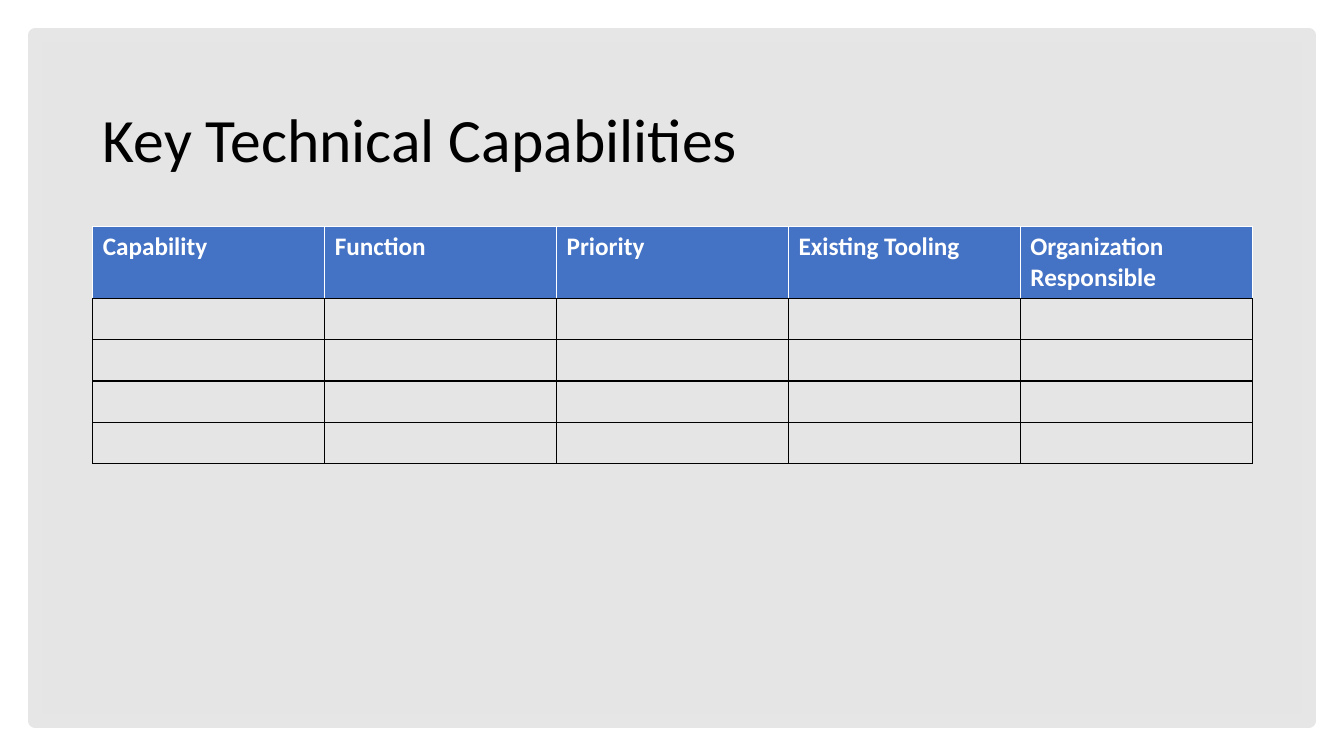
from lxml.etree import SubElement
from pptx import Presentation
from pptx.dml.color import RGBColor
from pptx.enum.shapes import MSO_SHAPE as Preset
from pptx.enum.text import MSO_ANCHOR as Anchor, MSO_AUTO_SIZE as AutoSize, PP_ALIGN as Align
from pptx.oxml.ns import qn
from pptx.util import Inches, Pt

BLACK, WHITE, BLUE, PALE = "000000", "FFFFFF", "4472C4", "E7E6E6"
HEADINGS = ["Capability", "Function", "Priority", "Existing Tooling", "Organization Responsible"]
BLANK_ROWS = 4


def colour(code):
    return RGBColor.from_string(code)


def write(frame, text, size=18, ink=BLACK, bold=False, font="Calibri", spacing=1.0):
    para = frame.paragraphs[0]
    para.alignment = Align.LEFT
    para.line_spacing = spacing
    span = para.add_run()
    span.text = text
    span.font.name = font
    span.font.size = Pt(size)
    span.font.bold = bold
    span.font.color.rgb = colour(ink)


class SlideBuilder:
    def __init__(self, page):
        self.page = page
        fill = page.background.fill
        fill.solid()
        fill.fore_color.rgb = colour(WHITE)

    def panel(self, left, top, width, height, fill, opacity, line, weight):
        box = self.page.shapes.add_shape(
            Preset.RECTANGLE, Inches(left), Inches(top), Inches(width), Inches(height))
        box.shadow.inherit = False
        box.fill.solid()
        box.fill.fore_color.rgb = colour(fill)
        tint = box.fill._xPr.find(qn("a:solidFill"))[0]
        SubElement(tint, qn("a:alpha"), val=str(opacity * 1000))
        box.line.color.rgb = colour(line)
        box.line.width = Pt(weight)
        self.page.shapes._spTree.insert(2, box._element)

    def title(self, text, left, top, width, height):
        box = self.page.shapes.title
        box.left, box.top = Inches(left), Inches(top)
        box.width, box.height = Inches(width), Inches(height)
        frame = box.text_frame
        frame.word_wrap = True
        frame.auto_size = AutoSize.NONE
        frame.vertical_anchor = Anchor.MIDDLE
        write(frame, text, size=44, spacing=0.9)

    def borders(self, cell, **sides):
        properties = cell._tc.get_or_add_tcPr()
        for side in "LRTB":
            line = SubElement(properties, qn(f"a:ln{side}"), w=str(Pt(1)))
            solid = SubElement(line, qn("a:solidFill"))
            SubElement(solid, qn("a:srgbClr"), val=sides.get(side, BLACK))

    def table(self, headings, blank_rows, left, top, width, row_height):
        rows = blank_rows + 1
        grid = self.page.shapes.add_table(
            rows, len(headings), Inches(left), Inches(top),
            Inches(width), Inches(row_height * rows)).table
        grid.horz_banding = False
        grid.first_row = False
        for column, heading in enumerate(headings):
            head = grid.cell(0, column)
            self.borders(head, L=WHITE, R=WHITE, T=WHITE)
            head.fill.solid()
            head.fill.fore_color.rgb = colour(BLUE)
            write(head.text_frame, heading, ink=WHITE, bold=True)
            for row in range(1, rows):
                cell = grid.cell(row, column)
                edges = {"T": BLACK}
                self.borders(cell, **edges)
                cell.fill.background()


def main():
    deck = Presentation()
    deck.slide_width, deck.slide_height = Inches(13.33), Inches(7.5)
    builder = SlideBuilder(deck.slides.add_slide(deck.slide_layouts[5]))
    builder.panel(0.35, 0.35, 12.63, 6.8, fill=BLACK, opacity=10, line=PALE, weight=10)
    builder.title("Key Technical Capabilities", 0.92, 0.69, 11.5, 1.45)
    builder.table(HEADINGS, BLANK_ROWS, 0.92, 2.25, 11.5, 0.41)
    deck.save("out.pptx")


if __name__ == "__main__":
    main()
